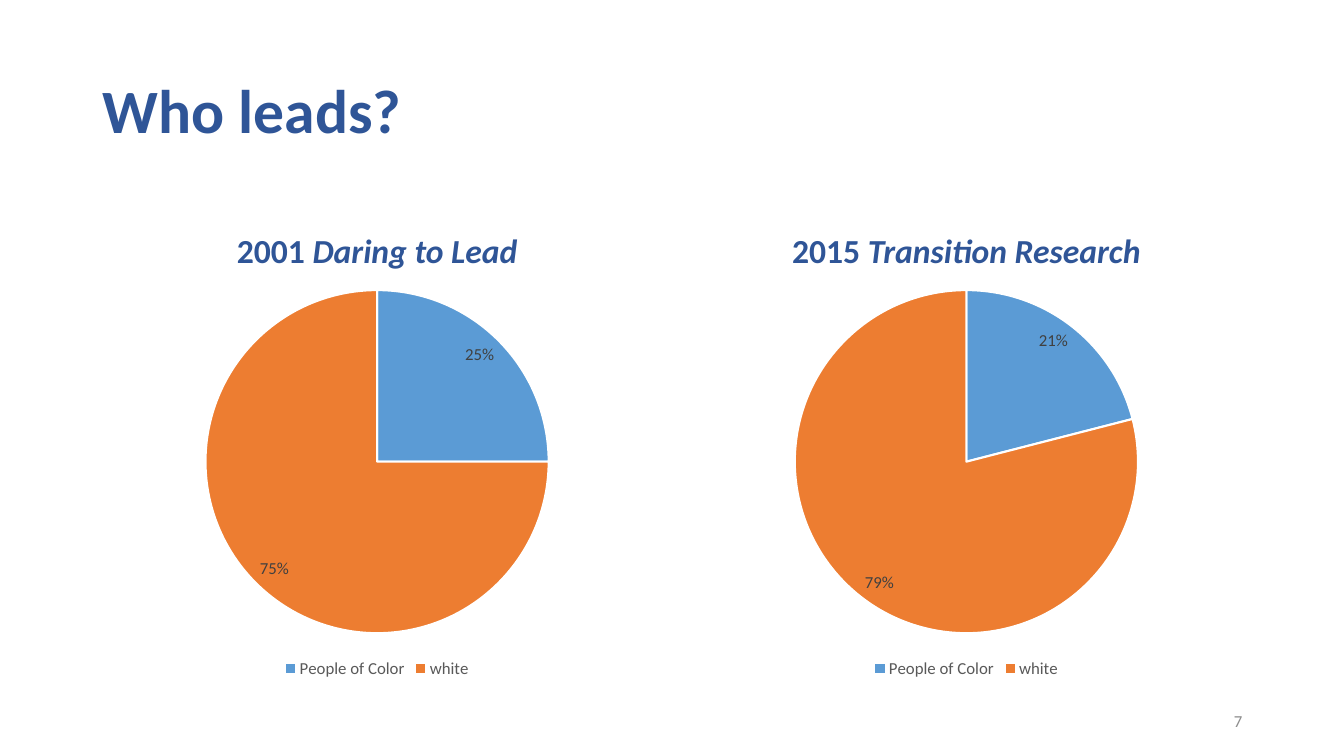
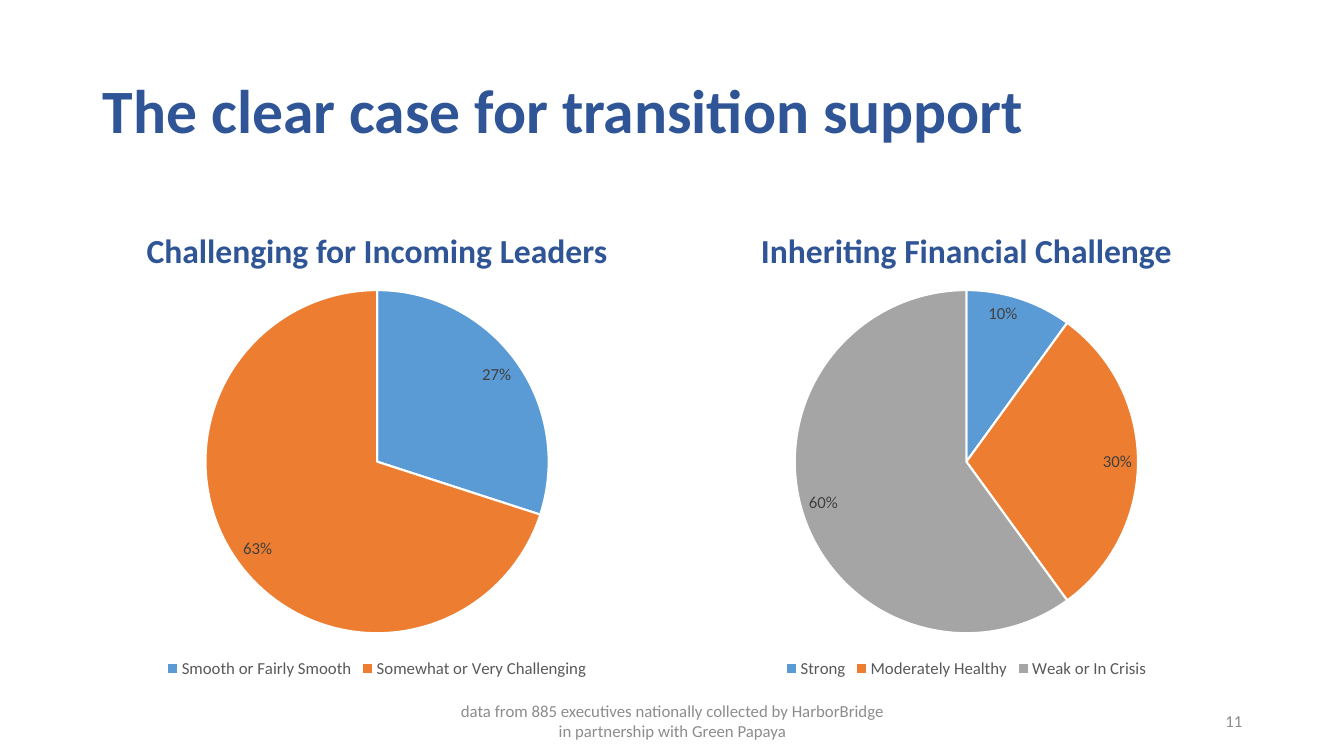
from pptx import Presentation
from pptx import util as u
from pptx.chart.data import CategoryChartData
from pptx.dml.color import RGBColor
from pptx.enum import chart as charts, text

# Content: headings are lists of (text, italic) runs
SLIDES = [
    {
        "title": "Who leads?",
        "number": "7",
        "footer": None,
        "panels": [
            ([("2001 ", False), ("Daring to Lead", True)],
             [("People of Color", 0.25), ("white", 0.75)]),
            ([("2015 ", False), ("Transition Research", True)],
             [("People of Color", 0.21), ("white", 0.79)]),
        ],
    },
    {
        "title": "The clear case for transition support",
        "number": "11",
        "footer": "data from 885 executives nationally collected by HarborBridge "
                  "in partnership with Green Papaya",
        "panels": [
            ([("Challenging for Incoming Leaders", False)],
             [("Smooth or Fairly Smooth", 0.27), ("Somewhat or Very Challenging", 0.63)]),
            ([("Inheriting Financial Challenge", False)],
             [("Strong", 0.1), ("Moderately Healthy", 0.3), ("Weak or In Crisis", 0.6)]),
        ],
    },
]

# Shared style
FONT = "Calibri"
WHITE = RGBColor(0xFF, 0xFF, 0xFF)
NAVY = RGBColor(0x2F, 0x55, 0x97)
FOOTER_GRAY = RGBColor(0x8C, 0x8C, 0x8C)
LEGEND_GRAY = RGBColor(0x59, 0x59, 0x59)
LABEL_GRAY = RGBColor(0x40, 0x40, 0x40)
SLICE_COLORS = [RGBColor(0x5B, 0x9B, 0xD5), RGBColor(0xED, 0x7D, 0x31),
                RGBColor(0xA5, 0xA5, 0xA5)]

# Layout in px, 100 px to the inch
PX = 9144
SLIDE_SIZE = (1333, 750)
TITLE_BOX = (92, 40, 1150, 145)
COLUMNS = [(92, 564), (675, 567)]  # left, width
HEADING_TOP, HEADING_HEIGHT = 184, 90
CHART_TOP, CHART_HEIGHT = HEADING_TOP + HEADING_HEIGHT, 403
FOOTER_BOX = (442, 695, 450, 40)
NUMBER_BOX = (942, 695, 300, 40)


def emu(*lengths):
    return [u.Emu(length * PX) for length in lengths]


def style_font(font, size, color, bold=False, italic=False):
    font.name = FONT
    font.size = u.Pt(size)
    font.color.rgb = color
    font.bold = bold
    font.italic = italic


def write(shape, runs, size, color, align, anchor, bold=False, spacing=1.0):
    frame = shape.text_frame
    frame.word_wrap = True
    frame.auto_size = text.MSO_AUTO_SIZE.NONE
    frame.vertical_anchor = anchor
    paragraph = frame.paragraphs[0]
    paragraph.alignment = align
    paragraph.line_spacing = spacing
    for words, italic in runs:
        run = paragraph.add_run()
        run.text = words
        style_font(run.font, size, color, bold, italic)


def add_title(slide, words):
    title = slide.shapes.title
    title.left, title.top, title.width, title.height = emu(*TITLE_BOX)
    write(title, [(words, False)], 44, NAVY, text.PP_ALIGN.LEFT,
          text.MSO_ANCHOR.MIDDLE, bold=True, spacing=0.9)


def add_heading(slide, runs, left, width):
    box = slide.shapes.add_textbox(*emu(left, HEADING_TOP, width, HEADING_HEIGHT))
    write(box, runs, 24, NAVY, text.PP_ALIGN.CENTER,
          text.MSO_ANCHOR.BOTTOM, bold=True, spacing=0.9)


def add_footer(slide, words, box, align):
    footer = slide.shapes.add_textbox(*emu(*box))
    write(footer, [(words, False)], 12, FOOTER_GRAY, align, text.MSO_ANCHOR.MIDDLE)


def add_pie(slide, shares, left, width):
    data = CategoryChartData(number_format="0%")
    data.categories = [name for name, _ in shares]
    data.add_series("Series 1", [share for _, share in shares])
    chart = slide.shapes.add_chart(
        charts.XL_CHART_TYPE.PIE, *emu(left, CHART_TOP, width, CHART_HEIGHT), data).chart
    chart.has_title = False
    chart.font.name = FONT
    chart.font.size = u.Pt(10)

    chart.has_legend = True
    chart.legend.position = charts.XL_LEGEND_POSITION.BOTTOM
    chart.legend.include_in_layout = False
    style_font(chart.legend.font, 12, LEGEND_GRAY)

    plot = chart.plots[0]
    plot.vary_by_categories = True
    plot.has_data_labels = True
    labels = plot.data_labels
    labels.show_value = True
    labels.show_percentage = False
    labels.number_format = "0%"
    labels.number_format_is_linked = False
    labels.position = charts.XL_LABEL_POSITION.INSIDE_END
    style_font(labels.font, 12, LABEL_GRAY)

    for index, color in enumerate(SLICE_COLORS[:len(shares)]):
        slice_format = plot.series[0].points[index].format
        slice_format.fill.solid()
        slice_format.fill.fore_color.rgb = color
        slice_format.line.color.rgb = WHITE
        slice_format.line.width = u.Pt(1.5)


def main():
    presentation = Presentation()
    presentation.slide_width, presentation.slide_height = emu(*SLIDE_SIZE)
    title_only = presentation.slide_layouts[5]
    for content in SLIDES:
        slide = presentation.slides.add_slide(title_only)
        add_title(slide, content["title"])
        for (heading, shares), (left, width) in zip(content["panels"], COLUMNS):
            add_heading(slide, heading, left, width)
            add_pie(slide, shares, left, width)
        add_footer(slide, content["number"], NUMBER_BOX, text.PP_ALIGN.RIGHT)
        if content["footer"]:
            add_footer(slide, content["footer"], FOOTER_BOX, text.PP_ALIGN.CENTER)
    presentation.save("out.pptx")


if __name__ == "__main__":
    main()
